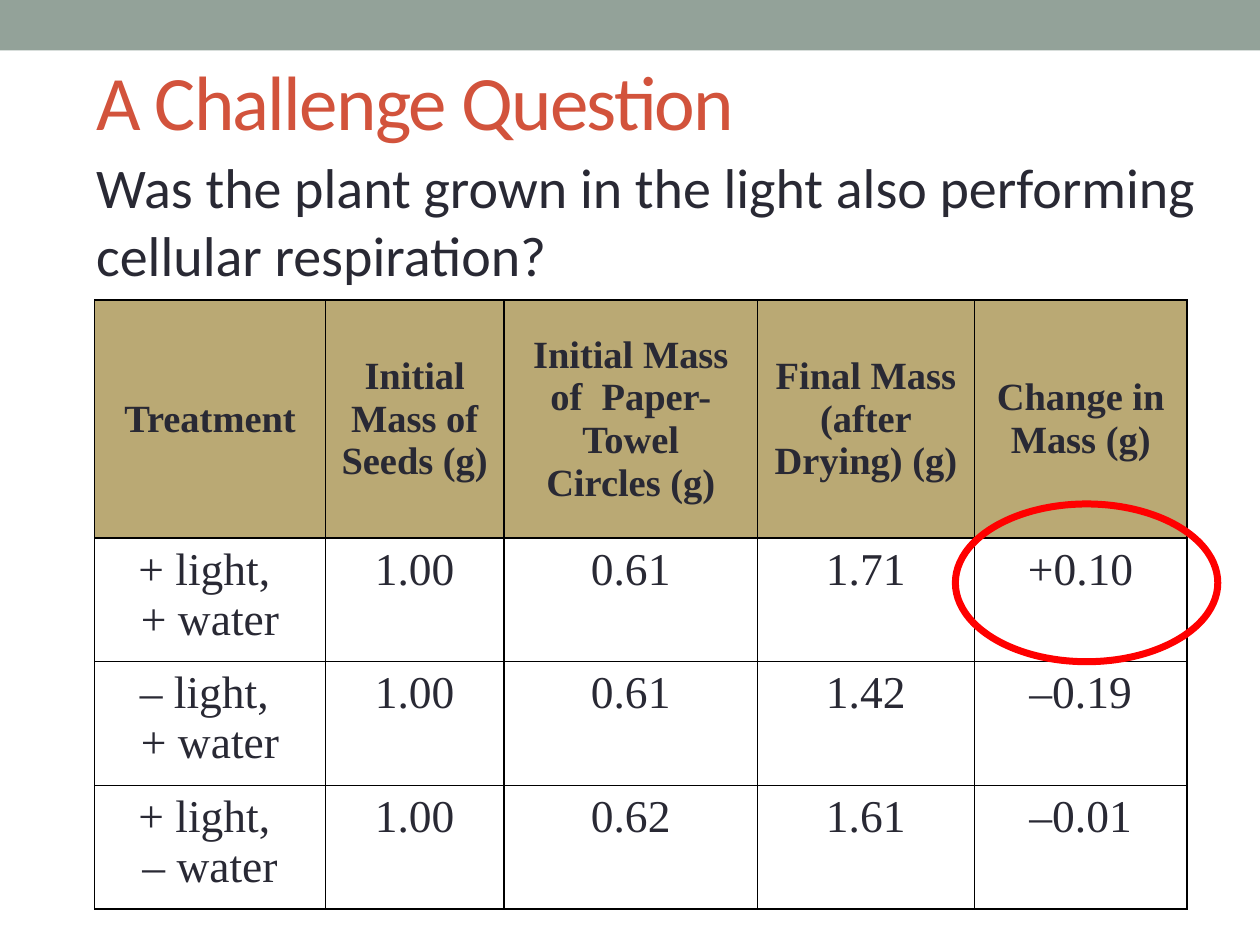
from lxml.etree import SubElement
from pptx import Presentation
from pptx.dml.color import RGBColor
from pptx.enum.shapes import MSO_SHAPE
from pptx.enum.text import MSO_ANCHOR, PP_ALIGN
from pptx.oxml.ns import qn
from pptx.util import Cm, Pt

COLORS = {
    "band": "93A299",
    "title": "D2533C",
    "text": "292934",
    "header": "BAA974",
    "border": "000000",
    "highlight": "FF0000",
}
FORMATS = {
    "title": {"name": "Calibri", "size": Pt(44)},
    "question": {"name": "Calibri", "size": Pt(32)},
    "header": {"name": "Times New Roman", "size": Pt(22), "bold": True},
    "body": {"name": "Times New Roman", "size": Pt(26), "bold": False},
}
COLUMN_WIDTHS = [4.65, 3.6, 5.11, 4.37, 4.29]
ROW_HEIGHTS = [4.8, 2.49, 2.49, 2.49]
ROWS = [
    [
        "Treatment",
        "Initial\nMass of\nSeeds (g)",
        "Initial Mass\nof  Paper-Towel\nCircles (g)",
        "Final Mass\n(after\nDrying) (g)",
        "Change in\nMass (g)",
    ],
    ["+ light, \n+ water", "1.00", "0.61", "1.71", "+0.10"],
    ["– light, \n+ water", "1.00", "0.61", "1.42", "–0.19"],
    ["+ light, \n– water", "1.00", "0.62", "1.61", "–0.01"],
]


class SlideBuilder:
    def __init__(self, slide, colors, formats):
        self.slide = slide
        self.colors = colors
        self.formats = formats

    def color(self, name):
        return RGBColor.from_string(self.colors[name])

    def fill_frame(self, frame, text, style, color):
        for index, line in enumerate(text.split("\n")):
            para = frame.paragraphs[0] if index == 0 else frame.add_paragraph()
            span = para.add_run()
            span.text = line
            for name, value in self.formats[style].items():
                setattr(span.font, name, value)
            span.font.color.rgb = self.color(color)

    def text(self, content, area, style, color, anchor=MSO_ANCHOR.TOP, tracking=0):
        frame = self.slide.shapes.add_textbox(*map(Cm, area)).text_frame
        frame.word_wrap = True
        frame.vertical_anchor = anchor
        self.fill_frame(frame, content, style, color)
        if tracking:
            for span in frame.paragraphs[0].runs:
                span.font._element.set("spc", str(tracking))

    def shape(self, kind, area, fill=None, line=None, weight=0):
        shape = self.slide.shapes.add_shape(kind, *map(Cm, area))
        shape.shadow.inherit = False
        if fill:
            shape.fill.solid()
            shape.fill.fore_color.rgb = self.color(fill)
        else:
            shape.fill.background()
        if line:
            shape.line.color.rgb = self.color(line)
            shape.line.width = Pt(weight)
        else:
            shape.line.fill.background()

    def borders(self, cell):
        properties = cell._tc.get_or_add_tcPr()
        for position, side in enumerate(("lnL", "lnR", "lnT", "lnB")):
            line = properties.makeelement(qn(f"a:{side}"), {"w": str(Pt(1))})
            fill = SubElement(line, qn("a:solidFill"))
            SubElement(fill, qn("a:srgbClr"), val=self.colors["border"])
            properties.insert(position, line)

    def cell(self, cell, content, is_header):
        if is_header:
            cell.fill.solid()
            cell.fill.fore_color.rgb = self.color("header")
            cell.vertical_anchor = MSO_ANCHOR.MIDDLE
        else:
            cell.fill.background()
        style = "header" if is_header else "body"
        self.fill_frame(cell.text_frame, content, style, "text")
        for para in cell.text_frame.paragraphs:
            para.alignment = PP_ALIGN.CENTER
            if "Paper" not in para.text:
                properties = para._p.get_or_add_pPr()
                properties.set("marL", str(Cm(0.95)))
                properties.set("indent", str(-Cm(0.95)))
        self.borders(cell)

    def table(self, rows, left, top, widths, heights):
        table = self.slide.shapes.add_table(
            len(rows), len(widths), Cm(left), Cm(top), Cm(sum(widths)), Cm(sum(heights))
        ).table
        table.horz_banding = False
        for column, width in zip(table.columns, widths):
            column.width = Cm(width)
        for row_index, (row, height) in enumerate(zip(rows, heights)):
            table.rows[row_index].height = Cm(height)
            for column_index, content in enumerate(row):
                self.cell(table.cell(row_index, column_index), content, row_index == 0)


def main():
    deck = Presentation()
    deck.slide_width, deck.slide_height = Cm(25.4), Cm(19.05)
    page = SlideBuilder(deck.slides.add_slide(deck.slide_layouts[6]), COLORS, FORMATS)
    page.shape(MSO_SHAPE.RECTANGLE, (0, 0, 25.4, 1.02), fill="band")
    page.text(
        "A Challenge Question", (1.69, 0.64, 22.44, 2.75), "title", "title",
        anchor=MSO_ANCHOR.MIDDLE, tracking=-100,
    )
    page.table(ROWS, 1.91, 6.05, COLUMN_WIDTHS, ROW_HEIGHTS)
    page.shape(MSO_SHAPE.OVAL, (19.26, 10.16, 5.29, 3.18), line="highlight", weight=4)
    page.text(
        "Was the plant grown in the light also performing cellular respiration?",
        (1.69, 2.96, 22.86, 3), "question", "text",
    )
    deck.save("out.pptx")


if __name__ == "__main__":
    main()
